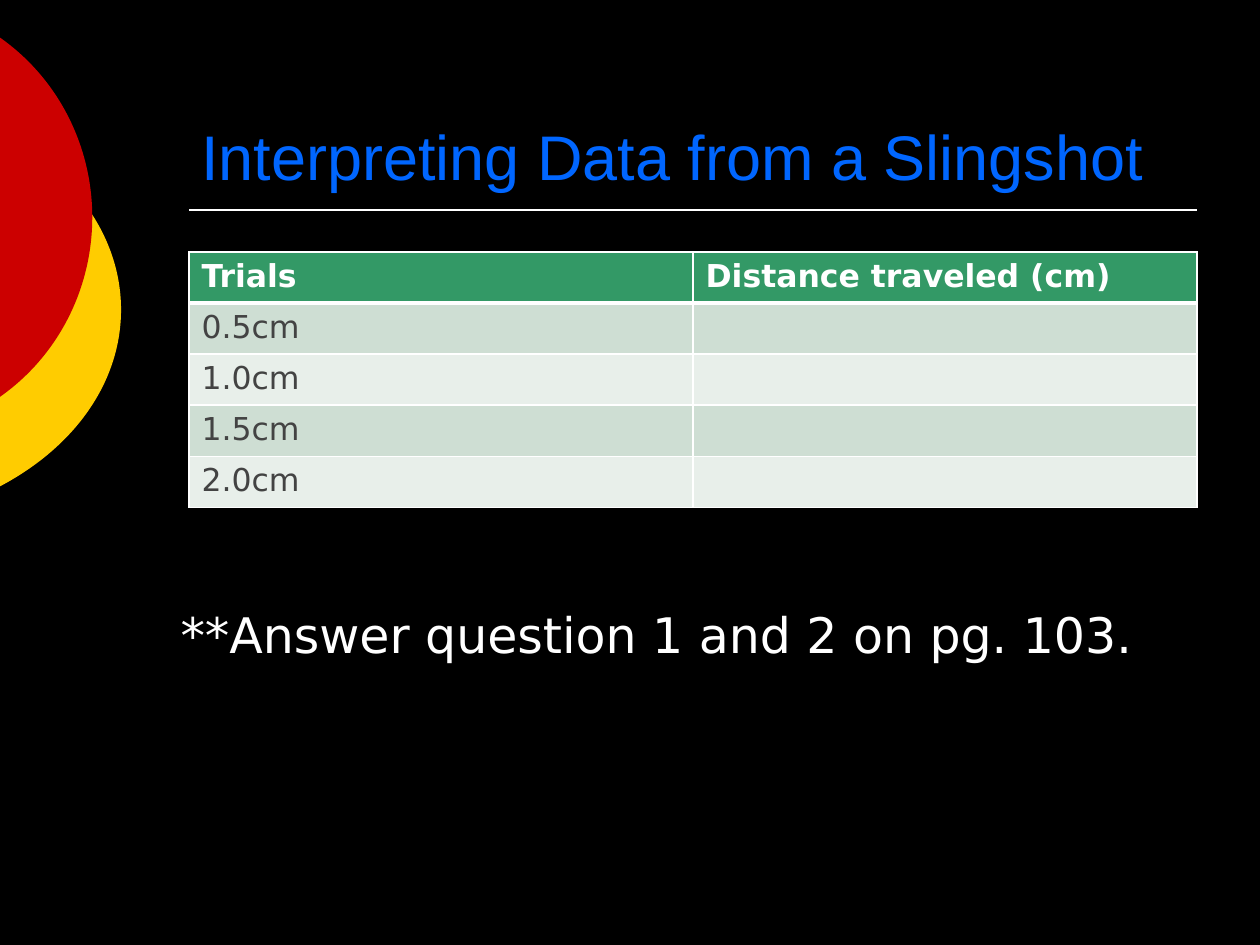
from lxml import etree
from pptx import Presentation
from pptx.dml.color import RGBColor
from pptx.enum.shapes import MSO_CONNECTOR
from pptx.enum.text import MSO_ANCHOR, MSO_AUTO_SIZE
from pptx.oxml.ns import qn
from pptx.util import Cm, Pt

STRAIGHT = MSO_CONNECTOR.STRAIGHT
TOP, BOTTOM = MSO_ANCHOR.TOP, MSO_ANCHOR.BOTTOM
GROW, FIXED = MSO_AUTO_SIZE.SHAPE_TO_FIT_TEXT, MSO_AUTO_SIZE.NONE

COLORS = {
    "background": "000000", "white": "FFFFFF", "title": "0066FF",
    "yellow": "FFCC00", "red": "CC0000", "header": "339966",
    "band_dark": "CEDED3", "band_light": "E8EFEA", "body": "434343",
}
TITLE_FORMAT = {"name": "Arial", "size": Pt(36)}
PROMPT_FORMAT = {"name": "DejaVu Sans", "size": Pt(28)}
HEADER_FORMAT = {"name": "DejaVu Sans", "size": Pt(18), "bold": True}
BODY_FORMAT = {"name": "DejaVu Sans", "size": Pt(18), "bold": False}
TRIALS = [
    ("Trials", "Distance traveled (cm)"),
    ("0.5cm", ""), ("1.0cm", ""), ("1.5cm", ""), ("2.0cm", ""),
]


def rgb(name):
    """Return the named palette colour."""
    return RGBColor.from_string(COLORS[name])


def paint(fill, color):
    """Give a fill one solid palette colour."""
    fill.solid()
    fill.fore_color.rgb = rgb(color)


def format_text(paragraph, text, values, color):
    """Write one run with the given font values."""
    run = paragraph.add_run()
    run.text = text
    for attribute, value in values.items():
        setattr(run.font, attribute, value)
    run.font.color.rgb = rgb(color)


def add_disc_edge(slide, box, half_chord, shoulder, flank, color):
    """Draw the part of a boxed disc that lies right of the slide's left edge."""
    left, top, width, height = box
    bulge = left + width
    corners = [(Cm(left + x), Cm(top + y))
               for x, y in ((0, 0), (width, 0), (width, height), (0, height))]
    builder = slide.shapes.build_freeform(*corners[0])
    builder.add_line_segments(corners[1:], close=True)
    disc = builder.convert_to_shape()
    disc.shadow.inherit = False
    paint(disc.fill, color)
    disc.line.fill.background()

    upper = [(0, -half_chord), shoulder, (bulge, flank), (bulge, 0)]
    lower = [(x, -y) for x, y in reversed(upper)]
    outline = next(disc.element.iter(qn("a:path")))
    for child in list(outline):
        outline.remove(child)
    for command, points in (("moveTo", upper[:1]), ("cubicBezTo", upper[1:]),
                            ("cubicBezTo", lower[1:]), ("close", [])):
        segment = etree.SubElement(outline, qn(f"a:{command}"))
        for x, y in points:
            etree.SubElement(segment, qn("a:pt"),
                             x=str(Cm(x - left)), y=str(Cm(height / 2 + y)))


def add_text(slide, box, text, values, color, anchor=TOP, sizing=FIXED):
    """Place a wrapped line of text in its box."""
    frame = slide.shapes.add_textbox(*map(Cm, box)).text_frame
    frame.word_wrap = True
    frame.auto_size = sizing
    frame.vertical_anchor = anchor
    format_text(frame.paragraphs[0], text, values, color)


def add_heading(slide, box):
    """Place the title with the rule beneath it."""
    left, top, width, height = box
    rule_gap = 0.23
    rule_y = top + height
    rule = slide.shapes.add_connector(
        STRAIGHT, Cm(left), Cm(rule_y), Cm(left + width), Cm(rule_y))
    rule.line.color.rgb = rgb("white")
    rule.line.width = Pt(1)
    etree.SubElement(rule.element.spPr, qn("a:effectLst"))
    add_text(slide, (left, top, width, height - rule_gap),
             "Interpreting Data from a Slingshot", TITLE_FORMAT, "title", BOTTOM)


def set_borders(cell, widths):
    """Draw white cell borders of the given widths ahead of the fill."""
    properties = cell._tc.get_or_add_tcPr()
    for position, (side, width) in enumerate(widths.items()):
        border = etree.Element(qn(f"a:{side}"), w=str(Pt(width)))
        solid = etree.SubElement(border, qn("a:solidFill"))
        etree.SubElement(solid, qn("a:srgbClr"), val=COLORS["white"])
        properties.insert(position, border)


def add_trials_table(slide, box):
    """Place the banded table of trials and distances."""
    height = box[3]
    table = slide.shapes.add_table(
        len(TRIALS), len(TRIALS[0]), *map(Cm, box)).table
    for row_index, texts in enumerate(TRIALS):
        table.rows[row_index].height = Cm(height / len(TRIALS))
        is_header = row_index == 0
        band = "band_dark" if row_index % 2 else "band_light"
        values = HEADER_FORMAT if is_header else BODY_FORMAT
        for column_index, text in enumerate(texts):
            cell = table.cell(row_index, column_index)
            paint(cell.fill, "header" if is_header else band)
            set_borders(cell, {"lnL": 1, "lnR": 1,
                               "lnT": 3 if row_index == 1 else 1,
                               "lnB": 3 if is_header else 1})
            if text:
                format_text(cell.text_frame.paragraphs[0], text, values,
                            "white" if is_header else "body")


def main():
    """Build and save the slingshot slide."""
    presentation = Presentation()
    presentation.slide_width, presentation.slide_height = Cm(25.4), Cm(19.05)
    slide = presentation.slides.add_slide(presentation.slide_layouts[6])
    paint(slide.background.fill, "background")
    add_disc_edge(slide, (-8.99, 1.9, 11.43, 8.69), 3.56, (1.55, -2.74), -1.42, "yellow")
    add_disc_edge(slide, (-6.73, 0, 8.59, 8.76), 3.62, (1.18, -2.79), -1.43, "red")
    add_heading(slide, (3.81, 0.84, 20.32, 3.4))
    add_trials_table(slide, (3.81, 5.08, 20.32, 5.14))
    add_text(slide, (3.39, 12.07, 20.32, 1.45),
             "**Answer question 1 and 2 on pg. 103.",
             PROMPT_FORMAT, "white", sizing=GROW)
    presentation.save("out.pptx")


if __name__ == "__main__":
    main()
